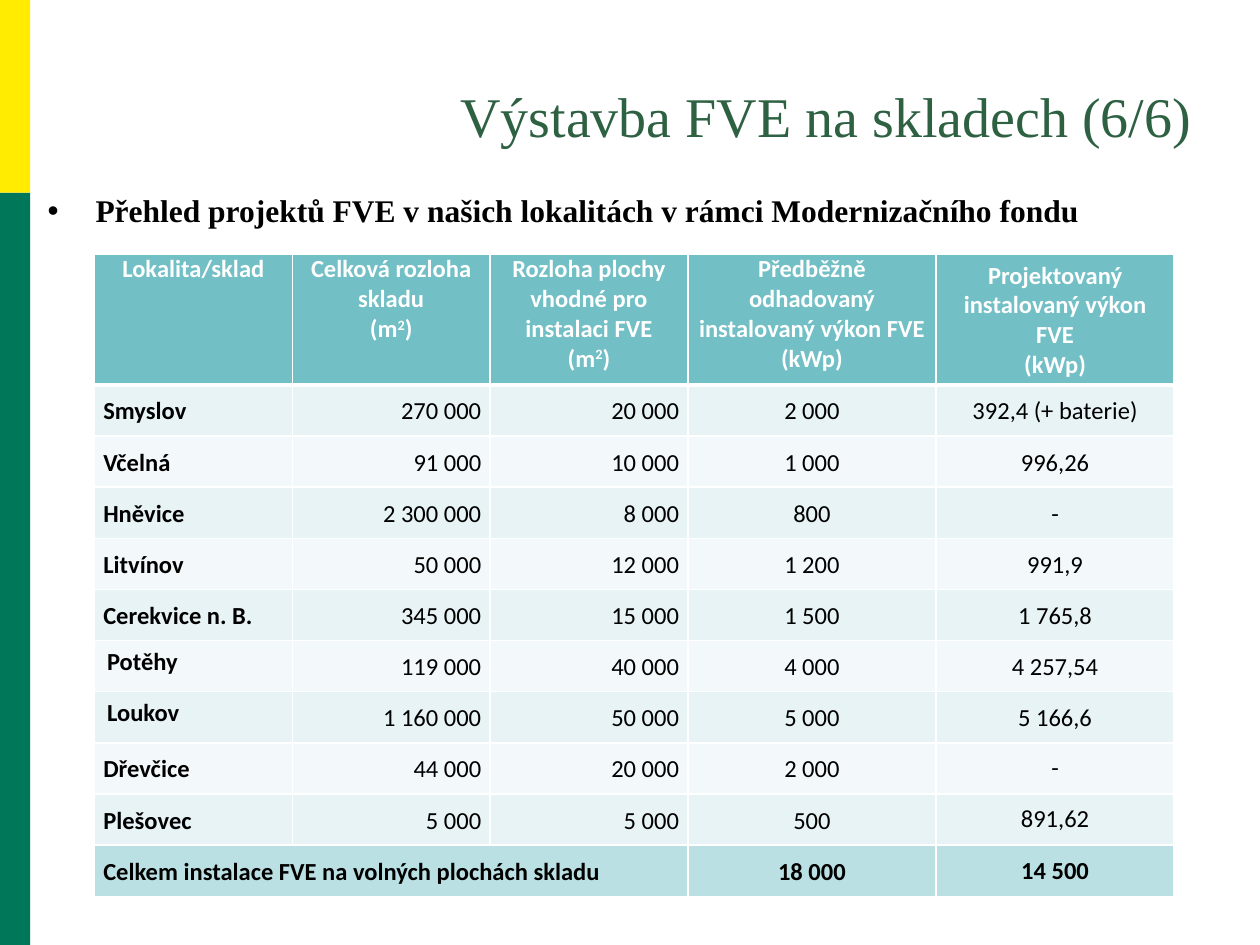
from lxml.etree import SubElement
from pptx import Presentation
from pptx.dml.color import RGBColor
from pptx.enum.shapes import MSO_SHAPE
from pptx.enum.text import MSO_ANCHOR, PP_ALIGN
from pptx.oxml.ns import qn
from pptx.util import Inches, Pt

GREEN = RGBColor(0x00, 0x77, 0x59)
YELLOW = RGBColor(0xFF, 0xEC, 0x00)
TITLE_GREEN = RGBColor(0x2D, 0x61, 0x42)
BLACK = RGBColor(0, 0, 0)
WHITE = RGBColor(0xFF, 0xFF, 0xFF)
HEADER_FILL = RGBColor(0x72, 0xBF, 0xC5)
BAND_FILLS = [RGBColor(0xE7, 0xF3, 0xF4), RGBColor(0xF3, 0xF9, 0xFA)]
TOTAL_FILL = RGBColor(0xBB, 0xE0, 0xE3)
SERIF, SANS = "Times New Roman", "Calibri"

COLUMN_WIDTHS = [1.57, 1.57, 1.57, 1.97, 1.89]
COLUMN_ALIGNS = [PP_ALIGN.LEFT, PP_ALIGN.RIGHT, PP_ALIGN.RIGHT, PP_ALIGN.CENTER, PP_ALIGN.CENTER]
HEADER_HEIGHT = Inches(1.03)
HEADERS = [
    "Lokalita/sklad",
    "Celková rozloha skladu\n(m2)",
    "Rozloha plochy vhodné pro instalaci FVE\n(m2)",
    "Předběžně odhadovaný instalovaný výkon FVE\n(kWp)",
    "Projektovaný instalovaný výkon FVE\n(kWp)",
]
SITES = [
    ["Smyslov", "270 000", "20 000", "2 000", "392,4 (+ baterie)"],
    ["Včelná", "91 000", "10 000", "1 000", "996,26"],
    ["Hněvice", "2 300 000", "8 000", "800", "-"],
    ["Litvínov", "50 000", "12 000", "1 200", "991,9"],
    ["Cerekvice n. B.", "345 000", "15 000", "1 500", "1 765,8"],
    ["Potěhy", "119 000", "40 000", "4 000", "4 257,54"],
    ["Loukov", "1 160 000", "50 000", "5 000", "5 166,6"],
    ["Dřevčice", "44 000", "20 000", "2 000", "-"],
    ["Plešovec", "5 000", "5 000", "500", "891,62"],
]
TOTAL = ["Celkem instalace FVE na volných plochách skladu", "", "", "18 000", "14 500"]
# Cells (row, column) that keep the default margins and single line spacing
TOP_CELLS = {(6, 0), (7, 0)}
LOOSE_CELLS = TOP_CELLS | {(0, 4), (8, 4), (9, 4), (10, 4)}


def style_font(font, name, size, color, bold=False):
    font.name, font.size, font.bold = name, Pt(size), bold
    font.color.rgb = color


def add_side_band(page, left, top, width, height):
    """Yellow block above a green block."""
    split = Inches(1.53)
    for color, start, extent in ((GREEN, top + split, height - split), (YELLOW, top, split)):
        block = page.shapes.add_shape(MSO_SHAPE.RECTANGLE, left, start, width, extent)
        block.shadow.inherit = False
        block.fill.solid()
        block.fill.fore_color.rgb = color
        block.line.fill.background()


def add_text(page, text, left, top, width, height):
    box = page.shapes.add_textbox(left, top, width, height)
    box.text_frame.word_wrap = True
    box.text_frame.text = text
    return box.text_frame, box.text_frame.paragraphs[0]


def add_title(page, left, top, width, height):
    frame, para = add_text(page, "Výstavba FVE na skladech (6/6)", left, top, width, height)
    frame.vertical_anchor = MSO_ANCHOR.MIDDLE
    para.alignment = PP_ALIGN.RIGHT
    style_font(para.runs[0].font, SERIF, 32, TITLE_GREEN)


def add_bullet_line(page, left, top, width, height):
    text = "Přehled projektů FVE v našich lokalitách v rámci Modernizačního fondu"
    _, para = add_text(page, text, left, top, width, height)
    properties = para._p.get_or_add_pPr()
    properties.set("marL", str(Inches(0.38)))
    properties.set("indent", str(-Inches(0.38)))
    SubElement(properties, qn("a:buFont"), typeface="Arial")
    SubElement(properties, qn("a:buChar"), char="•")
    para.space_after = Pt(3)
    style_font(para.runs[0].font, SERIF, 18, BLACK, True)


def set_borders(cell, row):
    """White rules, with a heavy one under the header."""
    heavy = {0: "lnB", 1: "lnT"}.get(row)
    for side in ("lnL", "lnR", "lnT", "lnB"):
        line = SubElement(cell._tc.get_or_add_tcPr(), qn("a:" + side),
                          w=str(Pt(3 if side == heavy else 1)))
        fill = SubElement(line, qn("a:solidFill"))
        SubElement(fill, qn("a:srgbClr"), val=str(WHITE))


def raise_digit(para):
    """Split "(m2)" into runs with the 2 as superscript."""
    para.runs[0].text = "(m"
    for text in ("2", ")"):
        para.add_run().text = text
    para.runs[1]._r.get_or_add_rPr().set("baseline", "30000")


def fill_cell(cell, text, row, column, fill, bold):
    is_header = row == 0
    set_borders(cell, row)
    cell.fill.solid()
    cell.fill.fore_color.rgb = fill
    loose = (row, column) in LOOSE_CELLS
    if not loose:
        cell.margin_left = cell.margin_right = Inches(0.07)
        cell.margin_top = cell.margin_bottom = 0
    if not is_header and (row, column) not in TOP_CELLS:
        cell.vertical_anchor = MSO_ANCHOR.MIDDLE
    cell.text_frame.text = text
    for para in cell.text_frame.paragraphs:
        para.alignment = PP_ALIGN.CENTER if is_header else COLUMN_ALIGNS[column]
        if not is_header and not loose:
            para.line_spacing = 1.07
        if para.text == "(m2)":
            raise_digit(para)
        for span in para.runs:
            style_font(span.font, SANS, 14, WHITE if is_header else BLACK, bold)


def add_site_table(page, left, top, width, height):
    rows = [HEADERS, *SITES, TOTAL]
    last = len(rows) - 1
    table = page.shapes.add_table(len(rows), len(HEADERS), left, top, width, height).table
    for column, column_width in zip(table.columns, COLUMN_WIDTHS):
        column.width = Inches(column_width)
    for index, row in enumerate(table.rows):
        row.height = HEADER_HEIGHT if index == 0 else (height - HEADER_HEIGHT) // last
    fills = [HEADER_FILL] + [BAND_FILLS[i % 2] for i in range(len(SITES))] + [TOTAL_FILL]
    for r, texts in enumerate(rows):
        for c, text in enumerate(texts):
            fill_cell(table.cell(r, c), text, r, c, fills[r], c == 0 or r in (0, last))
    table.cell(last, 0).merge(table.cell(last, 2))


def main():
    deck = Presentation()
    deck.slide_width, deck.slide_height = Inches(10), Inches(7.5)
    page = deck.slides.add_slide(deck.slide_layouts[6])
    add_side_band(page, 0, 0, Inches(0.24), deck.slide_height)
    add_title(page, Inches(3.5), Inches(0.36), Inches(6.06), Inches(1.1))
    add_bullet_line(page, Inches(0.28), Inches(1.47), Inches(9.45), Inches(5.55))
    add_site_table(page, Inches(0.75), Inches(2.02), Inches(8.58), Inches(5.09))
    deck.save("out.pptx")


if __name__ == "__main__":
    main()
